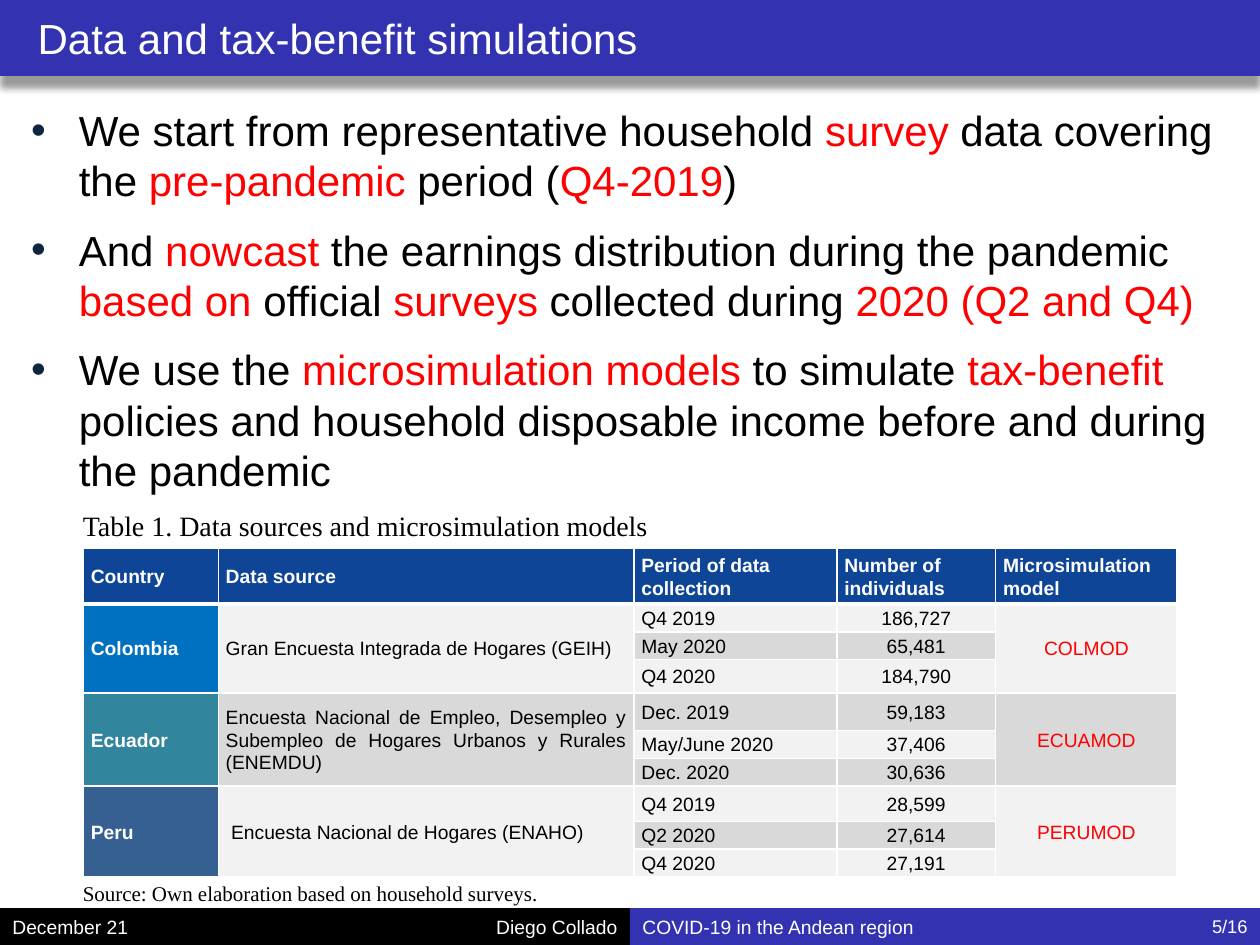
from collections import namedtuple
from dataclasses import dataclass

from lxml.etree import SubElement
from pptx import Presentation
from pptx.dml.color import RGBColor as Rgb
from pptx.enum.shapes import MSO_SHAPE as Shape
from pptx.enum.text import MSO_ANCHOR as Anchor, PP_ALIGN as Align
from pptx.oxml import parse_xml
from pptx.oxml.ns import nsdecls, qn
from pptx.util import Cm, Pt

Box = namedtuple("Box", "left top width height")  # centimetres


@dataclass(frozen=True)
class Theme:
    sans: str = "Arial"
    serif: str = "Times New Roman"
    white: str = "FFFFFF"
    black: str = "000000"
    accent: str = "FF0000"
    bar: str = "3333B2"
    bullet: str = "0F243E"
    table_head: str = "0E4596"
    bands: tuple = ("D9D9D9", "F2F2F2")
    heading_size: float = 24
    caption_size: float = 16
    source_size: float = 12
    small_size: float = 11
    page_size: float = 10.5


THEME = Theme()

BULLETS = [  # text between bars is highlighted
    "We start from representative household| survey |data covering the "
    "|pre-pandemic| period (|Q4-2019|)",
    "And |nowcast |the earnings distribution during the pandemic |based on "
    "|official |surveys| collected during |2020 (Q2 and Q4)",
    "We use the |microsimulation models |to simulate |tax-benefit| policies "
    "and household disposable income before and during the pandemic",
]

HEADINGS = ["Country", "Data source", "Period of data collection",
            "Number of individuals", "Microsimulation model"]
COUNTRIES = [  # name, colour, survey, model, samples
    ("Colombia", "0070C0", "Gran Encuesta Integrada de Hogares (GEIH)", "COLMOD",
     [("Q4 2019", "186,727"), ("May 2020", "65,481"), ("Q4 2020", "184,790")]),
    ("Ecuador", "31859C", "Encuesta Nacional de Empleo, Desempleo y Subempleo "
     "de Hogares Urbanos y Rurales (ENEMDU)", "ECUAMOD",
     [("Dec. 2019", "59,183"), ("May/June 2020", "37,406"), ("Dec. 2020", "30,636")]),
    ("Peru", "376092", " Encuesta Nacional de Hogares (ENAHO)", "PERUMOD",
     [("Q4 2019", "28,599"), ("Q2 2020", "27,614"), ("Q4 2020", "27,191")]),
]
COLUMN_WIDTHS = [2.72, 8.38, 4.09, 3.2, 3.66]
ROW_HEIGHTS = [1.13, 0.56, 0.56, 0.67, 0.76, 0.56, 0.56, 0.71, 0.56, 0.56]


def set_values(target, values):
    for name, value in values.items():
        setattr(target, name, value)


def add_span(para, text, size, color, font=THEME.sans, bold=False):
    span = para.add_run()
    span.text = text
    set_values(span.font, {"name": font, "size": Pt(size), "bold": bold})
    span.font.color.rgb = Rgb.from_string(color)


def add_rect(page, box, color):
    rect = page.shapes.add_shape(Shape.RECTANGLE, *map(Cm, box))
    rect.shadow.inherit = False
    rect.fill.solid()
    rect.fill.fore_color.rgb = Rgb.from_string(color)
    rect.line.fill.background()
    return rect


def add_frame(page, box, anchor=Anchor.TOP):
    frame = page.shapes.add_textbox(*map(Cm, box)).text_frame
    set_values(frame, {"word_wrap": True, "vertical_anchor": anchor})
    return frame


def add_line(page, box, text, size, color, anchor=Anchor.MIDDLE,
             font=THEME.sans, **format_values):
    frame = add_frame(page, box, anchor)
    para = frame.paragraphs[0]
    set_values(para, format_values)
    add_span(para, text, size, color, font)
    return frame


def add_title_bar(page, box):
    bar = add_rect(page, box, THEME.bar)
    effects = bar._element.spPr.find(qn("a:effectLst"))
    shadow = SubElement(effects, qn("a:outerShdw"), blurRad=str(Pt(4)),
                        dist=str(Pt(7)), dir="5400000", rotWithShape="0")
    color = SubElement(shadow, qn("a:srgbClr"), val=THEME.black)
    SubElement(color, qn("a:alpha"), val="40000")
    frame = add_line(page, box, "Data and tax-benefit simulations",
                     THEME.heading_size, THEME.white)
    frame.margin_left = Cm(0.76)


def add_bullets(page, box):
    frame = add_frame(page, box)
    indent = Cm(0.96)
    for index, text in enumerate(BULLETS):
        para = frame.add_paragraph() if index else frame.paragraphs[0]
        set_values(para, {"space_before": Pt(4.8), "space_after": Pt(6)})
        props = para._p.get_or_add_pPr()
        props.set("marL", str(indent))
        props.set("indent", str(-indent))
        color = SubElement(props, qn("a:buClr"))
        SubElement(color, qn("a:srgbClr"), val=THEME.bullet)
        SubElement(props, qn("a:buFont"), typeface=THEME.sans)
        SubElement(props, qn("a:buChar"), char="•")
        for part, words in enumerate(text.split("|")):
            add_span(para, words, THEME.heading_size,
                     THEME.accent if part % 2 else THEME.black)


def set_borders(cell, row):
    thick = {"T": row == 1, "B": row == 0}
    for index, side in enumerate("LRTB"):
        width = Pt(3 if thick.get(side) else 1)
        cell._tc.get_or_add_tcPr().insert(index, parse_xml(
            f'<a:ln{side} {nsdecls("a")} w="{width}"><a:solidFill>'
            f'<a:srgbClr val="{THEME.white}"/></a:solidFill></a:ln{side}>'))


def write_cell(cell, text, color=THEME.black, fill=None, bold=False, align=Align.JUSTIFY):
    if fill:
        cell.fill.fore_color.rgb = Rgb.from_string(fill)
    para = cell.text_frame.paragraphs[0]
    set_values(para, {"alignment": align, "line_spacing": 1.07})
    add_span(para, text, THEME.small_size, color, bold=bold)


def add_source_table(page, box):
    table = page.shapes.add_table(len(ROW_HEIGHTS), len(COLUMN_WIDTHS),
                                  *map(Cm, box)).table
    set_values(table, {"first_row": False, "horz_banding": False})
    for column, width in zip(table.columns, COLUMN_WIDTHS):
        column.width = Cm(width)
    # Bands, borders and margins of every cell
    for index, (row, height) in enumerate(zip(table.rows, ROW_HEIGHTS)):
        row.height = Cm(height)
        for cell in row.cells:
            set_values(cell, {"margin_left": Cm(0.15), "margin_right": Cm(0.15),
                              "margin_top": 0, "margin_bottom": 0,
                              "vertical_anchor": Anchor.MIDDLE})
            cell.fill.solid()
            cell.fill.fore_color.rgb = Rgb.from_string(THEME.bands[index % 2])
            set_borders(cell, index)
    # Heading row
    for column, heading in enumerate(HEADINGS):
        write_cell(table.cell(0, column), heading, THEME.white, THEME.table_head,
                   True, Align.LEFT)
    # One group of rows for each country
    top = 1
    for name, color, survey, model, samples in COUNTRIES:
        for column in (0, 1, 4):
            table.cell(top, column).merge(table.cell(top + len(samples) - 1, column))
        write_cell(table.cell(top, 0), name, THEME.white, color, True)
        write_cell(table.cell(top, 1), survey)
        write_cell(table.cell(top, 4), model, THEME.accent, align=Align.CENTER)
        for row, (period, count) in enumerate(samples, top):
            write_cell(table.cell(row, 2), period)
            write_cell(table.cell(row, 3), count, align=Align.CENTER)
        top += len(samples)


def add_table_block(page, box):
    note = {"color": THEME.black, "anchor": Anchor.TOP, "font": THEME.serif,
            "line_spacing": 1.15}
    add_line(page, Box(box.left, box.top, box.width, 1.02),
             "Table 1. Data sources and microsimulation models",
             THEME.caption_size, **note)
    add_source_table(page, Box(box.left + 0.26, box.top + 1.02,
                               sum(COLUMN_WIDTHS), sum(ROW_HEIGHTS)))
    add_line(page, Box(box.left, box.top + 7.52, 13.7, 0.81),
             "Source: Own elaboration based on household surveys.",
             THEME.source_size, alignment=Align.JUSTIFY, **note)


def add_footer(page, box):
    half = box.width / 2
    entries = [  # offset, width, text, size, alignment
        (0, 5.3, "December 21", THEME.small_size, Align.LEFT),
        (half - 9.7, 9.7, "Diego Collado", THEME.small_size, Align.RIGHT),
        (half, 9.4, "COVID-19 in the Andean region", THEME.small_size, Align.LEFT),
        (box.width - 3, 3, "5/16", THEME.page_size, Align.RIGHT),
    ]
    for index, color in enumerate((THEME.black, THEME.bar)):
        add_rect(page, Box(box.left + index * half, box.top, half, box.height), color)
    for offset, width, text, size, align in entries:
        add_line(page, Box(box.left + offset, box.top, width, box.height),
                 text, size, THEME.white, alignment=align)


def main():
    deck = Presentation()
    set_values(deck, {"slide_width": Cm(25.4), "slide_height": Cm(19.05)})
    page = deck.slides.add_slide(deck.slide_layouts[6])
    add_title_bar(page, Box(0, 0, 25.4, 1.53))
    add_bullets(page, Box(0.38, 1.98, 24.4, 8))
    add_table_block(page, Box(1.42, 10.03, 22.55, 8.33))
    add_footer(page, Box(0, 18.31, 25.4, 0.74))
    deck.save("out.pptx")


if __name__ == "__main__":
    main()
